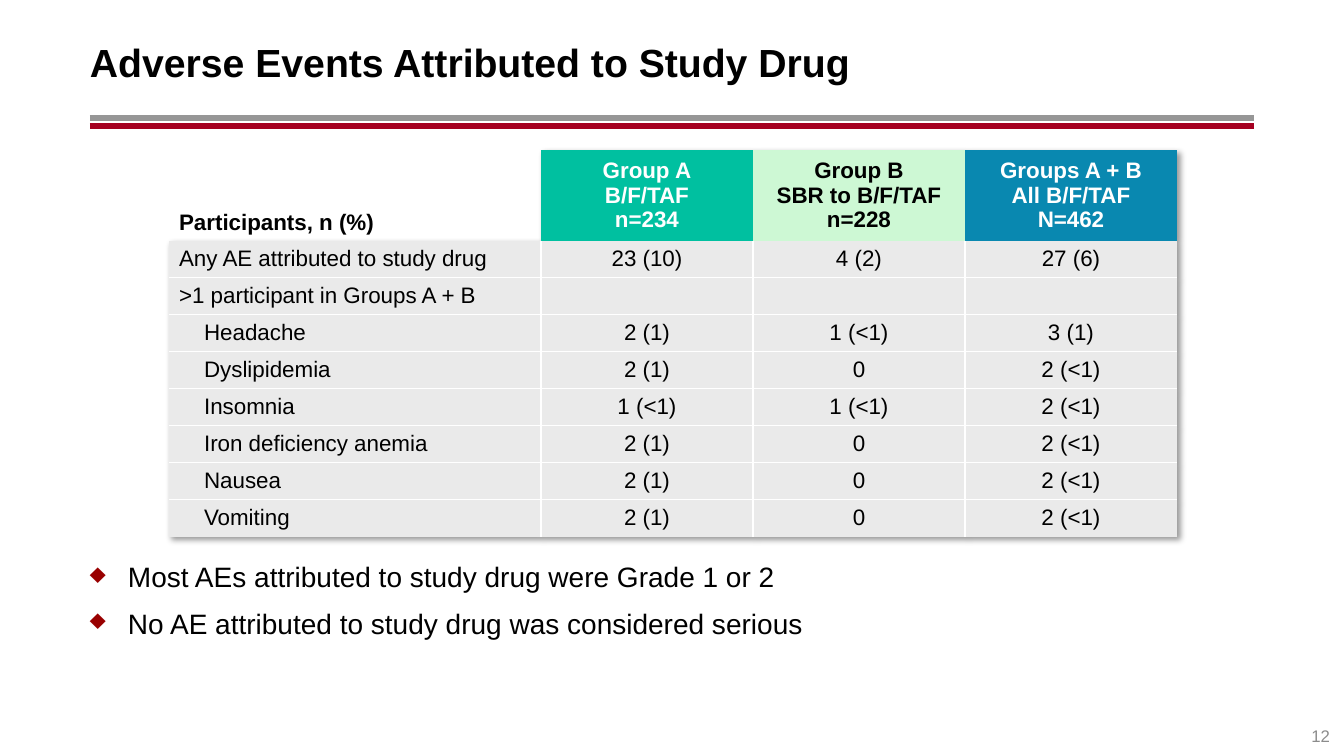
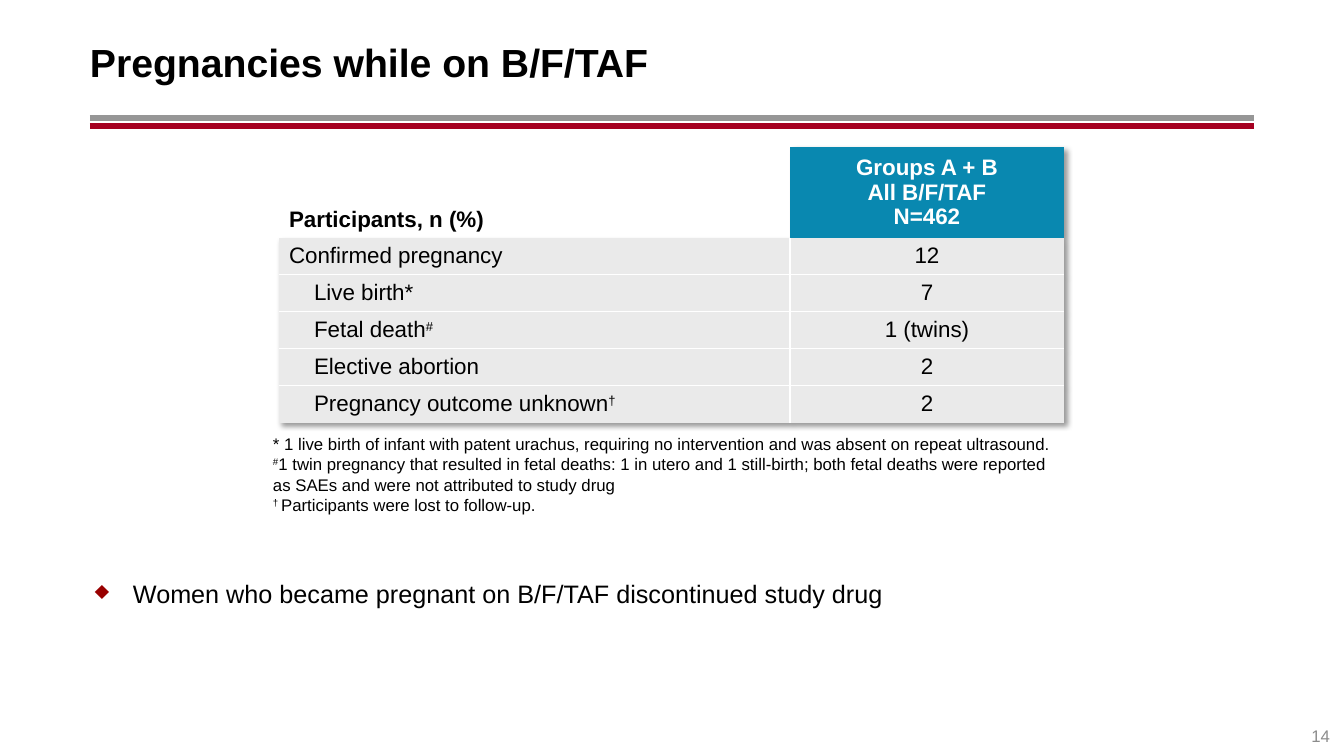
from dataclasses import dataclass
from lxml.etree import SubElement as Sub, Element
from pptx import Presentation
from pptx.dml.color import RGBColor as RGB
from pptx.enum.shapes import MSO_CONNECTOR as Conn
from pptx.enum.text import MSO_ANCHOR as Anchor, PP_ALIGN as Align
from pptx.oxml.ns import qn
from pptx.util import Emu, Pt


@dataclass(frozen=True)
class Theme:
    font: str = "Arial"
    black: str = "000000"
    white: str = "FFFFFF"
    grey: str = "969696"
    red: str = "A50021"
    mark: str = "990000"
    faint: str = "8C8C8C"
    row: str = "EAEAEA"
    teal: str = "00C0A0"
    mint: str = "CDF8D4"
    blue: str = "0988B0"
    title: int = 28
    point: int = 20
    small: int = 18
    cell: int = 16
    note: int = 12
    rule: float = 4.25


SCALE = 914400 / 100.8
PLAIN = "{2D5ABB26-0587-4C30-8999-92F81FD0307C}"


def px(n):
    return Emu(round(n * SCALE))


class Deck:
    def __init__(self, theme):
        self.theme = theme
        self.show = Presentation()
        self.show.slide_width = px(1344)
        self.show.slide_height = px(756)
        self.slide = None

    def page(self, title, number):
        t = self.theme
        self.slide = self.show.slides.add_slide(self.show.slide_layouts[6])
        self.rule(118, t.grey)
        self.rule(126, t.red)
        head = self.box(90, 18, 1165, 87, Anchor.MIDDLE)
        self.put(head.paragraphs[0], title, t.title, bold=True)
        foot = self.box(1254, 716, 86, 40, Anchor.MIDDLE, 10)
        self.put(foot.paragraphs[0], str(number), t.note, t.faint, align=Align.RIGHT)

    def rule(self, y, color):
        line = self.slide.shapes.add_connector(Conn.STRAIGHT, px(90), px(y), px(1254), px(y))
        line.line.color.rgb = RGB.from_string(color)
        line.line.width = Pt(self.theme.rule)
        Sub(line._element.spPr, qn("a:effectLst"))

    def box(self, x, y, w, h, anchor=Anchor.TOP, pad=0):
        frame = self.slide.shapes.add_textbox(px(x), px(y), px(w), px(h)).text_frame
        frame.word_wrap = True
        frame.vertical_anchor = anchor
        frame.margin_left = frame.margin_right = px(pad)
        return frame

    def put(self, para, text, size, color=None, bold=False, align=Align.LEFT):
        para.alignment = align
        if not text:
            Sub(para._p, qn("a:endParaRPr"), sz=str(size * 100))
        for i, part in enumerate(text.split("^")):
            if not part:
                continue
            run = para.add_run()
            run.text = part
            run.font.name = self.theme.font
            run.font.size = Pt(size)
            run.font.bold = bold
            run.font.color.rgb = RGB.from_string(color or self.theme.black)
            if i % 2:
                run._r.get_or_add_rPr().set("baseline", "30000")

    def fill(self, frame, lines, size, color=None, bold=False, align=Align.LEFT):
        for i, text in enumerate(lines):
            para = frame.add_paragraph() if i else frame.paragraphs[0]
            self.put(para, text, size, color, bold, align)

    def points(self, x, y, size, lines):
        frame = self.box(x, y, 1165, 105)
        self.fill(frame, lines, size)
        for para in frame.paragraphs:
            para.space_before = Pt(9)
            props = para._p.get_or_add_pPr()
            props.set("marL", str(px(38)))
            props.set("indent", str(-px(38)))
            tint = Sub(props, qn("a:buClr"))
            Sub(tint, qn("a:srgbClr"), val=self.theme.mark)
            Sub(props, qn("a:buChar"), char="♦")

    def notes(self, x, y, w, h, lines):
        self.fill(self.box(x, y, w, h), lines, self.theme.note)

    def edge(self, cell, sides):
        props = cell._tc.get_or_add_tcPr()
        for i, (side, shown) in enumerate(sides.items()):
            line = Element(qn("a:ln" + side), w=str(Pt(1) if shown else 0))
            if shown:
                paint = Sub(line, qn("a:solidFill"))
                Sub(paint, qn("a:srgbClr"), val=self.theme.white)
            else:
                Sub(line, qn("a:noFill"))
            props.insert(i, line)

    def shade(self, table):
        props = table._tbl.tblPr
        props.find(qn("a:tableStyleId")).text = PLAIN
        group = Element(qn("a:effectLst"))
        cast = Sub(group, qn("a:outerShdw"), blurRad="50800", dist="38100",
                   dir="2700000", algn="tl", rotWithShape="0")
        tint = Sub(cast, qn("a:prstClr"), val="black")
        Sub(tint, qn("a:alpha"), val="40000")
        props.insert(0, group)

    def table(self, x, y, widths, heads, rows):
        t = self.theme
        tall = [85] + [35] * len(rows)
        table = self.slide.shapes.add_table(
            len(tall), len(widths), px(x), px(y), px(sum(widths)), px(sum(tall))).table
        table.first_row = table.horz_banding = False
        self.shade(table)
        for col, wide in zip(table.columns, widths):
            col.width = px(wide)
        for row, high in zip(table.rows, tall):
            row.height = px(high)
        for c, (text, back, ink) in enumerate(heads):
            cell = table.cell(0, c)
            cell.vertical_anchor = Anchor.MIDDLE if c else Anchor.BOTTOM
            if back:
                cell.fill.solid()
                cell.fill.fore_color.rgb = RGB.from_string(back)
            else:
                cell.fill.background()
            self.fill(cell.text_frame, text.split("\n"), t.cell, ink, True,
                      Align.CENTER if c else Align.LEFT)
        for r, (depth, *texts) in enumerate(rows, 1):
            for c, text in enumerate(texts):
                cell = table.cell(r, c)
                cell.vertical_anchor = Anchor.MIDDLE
                cell.fill.solid()
                cell.fill.fore_color.rgb = RGB.from_string(t.row)
                para = cell.text_frame.paragraphs[0]
                self.put(para, text, t.cell, align=Align.CENTER if c else Align.LEFT)
                if depth and not c:
                    para._p.get_or_add_pPr().set("marL", str(px(25 * depth)))
                self.edge(cell, {"L": c > 0, "R": c < len(texts) - 1,
                                 "T": r > 1, "B": r < len(rows)})


def main():
    theme = Theme()
    deck = Deck(theme)
    label = ("Participants, n (%)", None, theme.black)
    total = ("Groups A + B\nAll B/F/TAF\nN=462", theme.blue, theme.white)

    deck.page("Adverse Events Attributed to Study Drug", 12)
    deck.table(169, 150, [372, 212, 212, 212], [
        label,
        ("Group A\nB/F/TAF\nn=234", theme.teal, theme.white),
        ("Group B\nSBR to B/F/TAF\nn=228", theme.mint, theme.black),
        total,
    ], [
        (0, "Any AE attributed to study drug", "23 (10)", "4 (2)", "27 (6)"),
        (0, ">1 participant in Groups A + B", "", "", ""),
        (1, "Headache", "2 (1)", "1 (<1)", "3 (1)"),
        (1, "Dyslipidemia", "2 (1)", "0", "2 (<1)"),
        (1, "Insomnia", "1 (<1)", "1 (<1)", "2 (<1)"),
        (1, "Iron deficiency anemia", "2 (1)", "0", "2 (<1)"),
        (1, "Nausea", "2 (1)", "0", "2 (<1)"),
        (1, "Vomiting", "2 (1)", "0", "2 (<1)"),
    ])
    deck.points(90, 555, theme.point, [
        "Most AEs attributed to study drug were Grade 1 or 2",
        "No AE attributed to study drug was considered serious",
    ])

    deck.page("Pregnancies while on B/F/TAF", 14)
    deck.table(279, 147, [511, 274], [label, total], [
        (0, "Confirmed pregnancy", "12"),
        (1, "Live birth*", "7"),
        (1, "Fetal death^#^", "1 (twins)"),
        (1, "Elective abortion", "2"),
        (1, "Pregnancy outcome unknown^†^", "2"),
    ])
    deck.notes(273, 429, 785, 90, [
        "* 1 live birth of infant with patent urachus, requiring no intervention "
        "and was absent on repeat ultrasound.",
        "^#^1 twin pregnancy that resulted in fetal deaths: 1 in utero and 1 still-birth; "
        "both fetal deaths were reported as SAEs and were not attributed to study drug",
        "^† ^Participants were lost to follow-up.",
    ])
    deck.points(95, 573, theme.small, [
        "Women who became pregnant on B/F/TAF discontinued study drug",
    ])
    deck.show.save("out.pptx")


if __name__ == "__main__":
    main()
